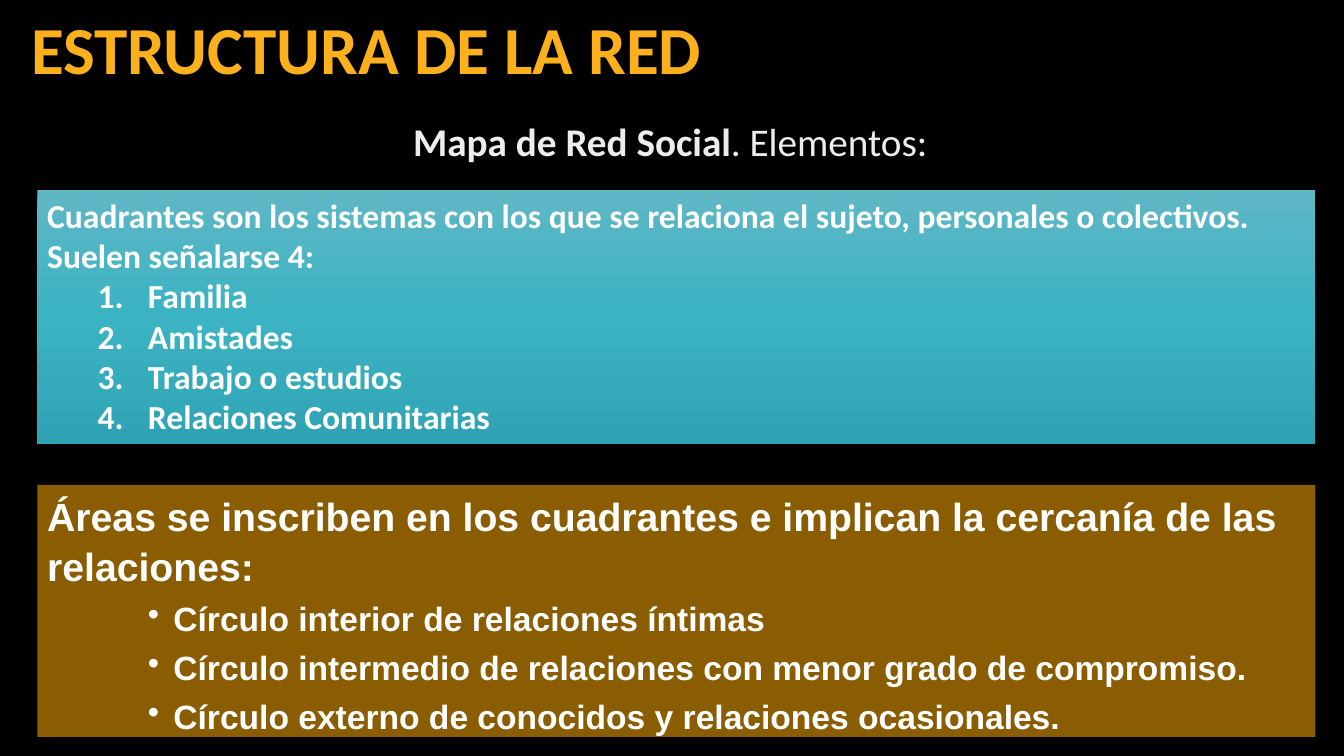
from copy import deepcopy
from dataclasses import dataclass

from lxml.etree import SubElement
from pptx import Presentation
from pptx.dml.color import RGBColor
from pptx.enum.shapes import MSO_SHAPE
from pptx.enum.text import MSO_ANCHOR, MSO_AUTO_SIZE, PP_ALIGN
from pptx.oxml.ns import qn
from pptx.util import Cm, Pt

WHITE = "FFFFFF"
PANEL_LEFT, PANEL_WIDTH = 0.94, 32.21


@dataclass
class ListStyle:
    level: int
    margin: float
    hanging: float
    bullet_tag: str
    bullet_attributes: dict[str, str]


@dataclass
class Panel:
    top: float
    height: float
    colors: list[str]
    font_name: str
    intro: str
    intro_size: int
    items: list[str]
    item_size: int
    list_style: ListStyle
    line_spacing: float
    item_gap: float


PANELS = [
    Panel(
        4.78, 6.4, ["5FB7C5", "3BB3C3", "2FA3B3"], "Calibri",
        "Cuadrantes son los sistemas con los que se relaciona el sujeto, "
        "personales o colectivos. Suelen señalarse 4:", 24,
        ["Familia", "Amistades", "Trabajo o estudios", "Relaciones Comunitarias"], 24,
        ListStyle(1, 2.54, 1.27, "a:buAutoNum", {"type": "arabicPeriod"}), 1.0, 0,
    ),
    Panel(
        12.22, 6.35, ["8A5D02"], "Arial",
        "Áreas se inscriben en los cuadrantes e implican la cercanía de las relaciones:", 28,
        [
            "Círculo interior de relaciones íntimas",
            "Círculo intermedio de relaciones con menor grado de compromiso.",
            "Círculo externo de conocidos y relaciones ocasionales.",
        ], 24,
        ListStyle(2, 3.18, 0.64, "a:buChar", {"char": "•"}), 1.06, 4.5,
    ),
]


def rgb(color: str) -> RGBColor:
    return RGBColor.from_string(color)


def format_font(font, name: str, size: float, color: str, bold: bool = True) -> None:
    font.name, font.size, font.bold = name, Pt(size), bold
    font.color.rgb = rgb(color)


def place(shape, left: float, top: float, width: float, height: float) -> None:
    shape.left, shape.top = Cm(left), Cm(top)
    shape.width, shape.height = Cm(width), Cm(height)


def set_indent(para, margin: float, hanging: float) -> None:
    properties = para._p.get_or_add_pPr()
    properties.set("marL", str(Cm(margin)))
    properties.set("indent", str(-Cm(hanging)))


def fill_panel(box, colors: list[str]) -> None:
    """Fill with one colour, or with a top-to-bottom gradient of three."""
    if len(colors) == 1:
        box.fill.solid()
        box.fill.fore_color.rgb = rgb(colors[0])
        return
    box.fill.gradient()
    box.fill.gradient_angle = 270
    stop_list = next(box._element.spPr.iter(qn("a:gsLst")))
    stop_list.insert(1, deepcopy(stop_list[0]))
    for index, (stop, color) in enumerate(zip(box.fill.gradient_stops, colors)):
        stop.color.rgb = rgb(color)
        stop.position = index / (len(colors) - 1)


def add_panel(slide, panel: Panel) -> None:
    box = slide.shapes.add_shape(
        MSO_SHAPE.RECTANGLE, Cm(PANEL_LEFT), Cm(panel.top), Cm(PANEL_WIDTH), Cm(panel.height)
    )
    box.shadow.inherit = False
    box.line.fill.background()
    fill_panel(box, panel.colors)
    frame = box.text_frame
    frame.word_wrap = True
    frame.vertical_anchor = MSO_ANCHOR.TOP
    frame.text = "\n".join([panel.intro, *panel.items])
    for index, para in enumerate(frame.paragraphs):
        para.alignment = PP_ALIGN.LEFT
        para.line_spacing = panel.line_spacing
        if index == 0:
            para.level = 1
            set_indent(para, 0, 0)
        else:
            style = panel.list_style
            para.level = style.level
            para.space_before = Pt(panel.item_gap)
            set_indent(para, style.margin, style.hanging)
            SubElement(para._p.get_or_add_pPr(), qn(style.bullet_tag), style.bullet_attributes)
        size = panel.item_size if index else panel.intro_size
        format_font(para.runs[0].font, panel.font_name, size, WHITE)


def add_title(slide) -> None:
    title = slide.shapes.title
    place(title, 0.53, 0.08, 26.09, 2.51)
    frame = title.text_frame
    frame.text = "ESTRUCTURA DE LA RED"
    frame.auto_size = MSO_AUTO_SIZE.NONE
    frame.vertical_anchor = MSO_ANCHOR.MIDDLE
    para = frame.paragraphs[0]
    para.alignment = PP_ALIGN.LEFT
    para.line_spacing = 0.9
    format_font(para.runs[0].font, "Calibri", 48, "FCB11C")


def add_subtitle(slide) -> None:
    body = slide.placeholders[1]
    place(body, 5.46, 2.95, 22.86, 2.01)
    frame = body.text_frame
    frame.auto_size = MSO_AUTO_SIZE.NONE
    para = frame.paragraphs[0]
    para.alignment = PP_ALIGN.CENTER
    para.line_spacing = 0.9
    para.space_before = Pt(0)
    set_indent(para, 0, 0)
    SubElement(para._p.get_or_add_pPr(), qn("a:buNone"))
    for text, bold in [("Mapa de Red Social", True), (". Elementos:", False)]:
        span = para.add_run()
        span.text = text
        format_font(span.font, "Calibri", 28, "EDEDED", bold)


def main() -> None:
    deck = Presentation()
    deck.slide_width, deck.slide_height = Cm(33.87), Cm(19.05)
    slide = deck.slides.add_slide(deck.slide_layouts[1])
    slide.background.fill.solid()
    slide.background.fill.fore_color.rgb = rgb("000000")
    add_title(slide)
    add_subtitle(slide)
    for panel in PANELS:
        add_panel(slide, panel)
    deck.save("out.pptx")


if __name__ == "__main__":
    main()
